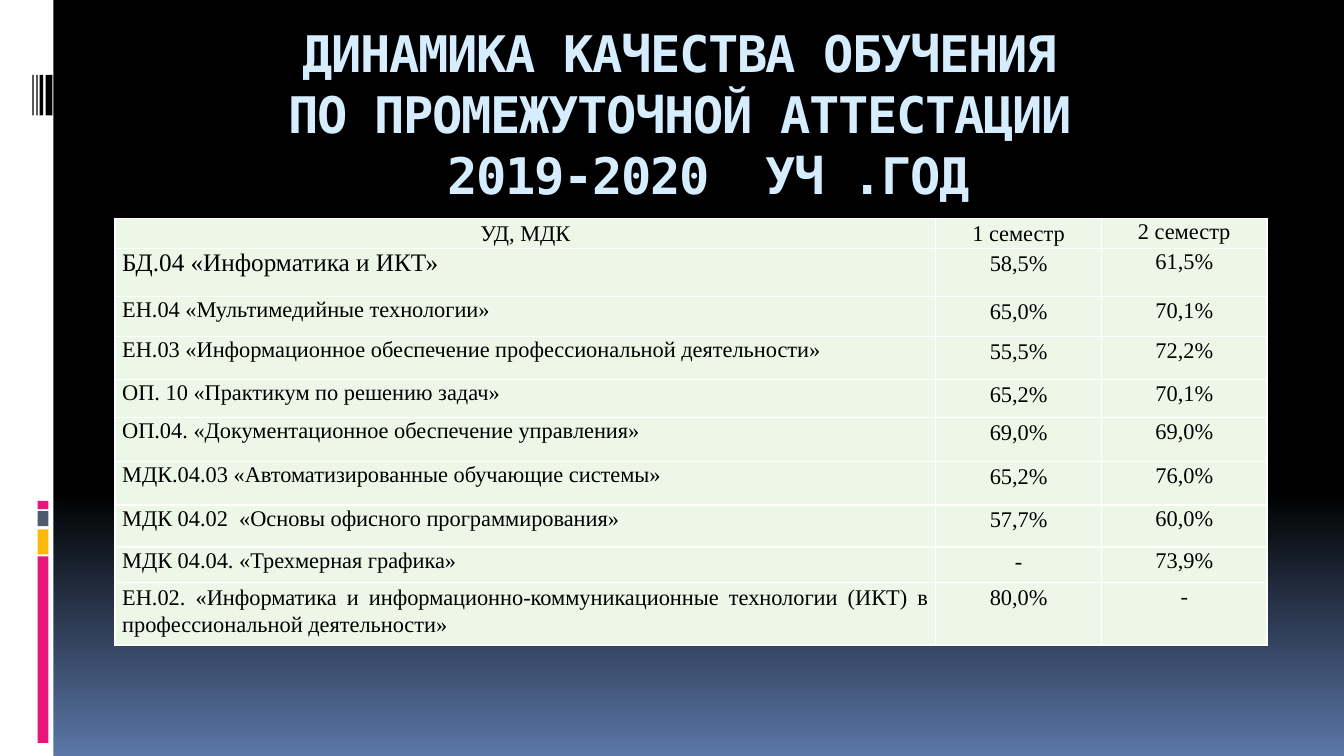
from lxml.etree import SubElement
from pptx import Presentation
from pptx.dml.color import RGBColor
from pptx.enum.shapes import MSO_SHAPE
from pptx.enum.text import MSO_ANCHOR, PP_ALIGN
from pptx.oxml.ns import qn
from pptx.util import Cm, Pt

HUES = {
    "black": "000000", "blue": "5B77A8", "white": "FFFFFF", "pink": "EA157A",
    "gold": "FEB80A", "slate": "4E5B6F", "title": "D6ECFF", "cell": "ECF7E8",
}
TITLE = (
    "ДИНАМИКА КАЧЕСТВА ОБУЧЕНИЯ \v"
    "ПО ПРОМЕЖУТОЧНОЙ АТТЕСТАЦИИ \v"
    " 2019-2020  УЧ .ГОД"
)
ROWS = [
    (0.72, "УД, МДК", "1 семестр", "2 семестр"),
    (1.22, "БД.04 «Информатика и ИКТ»", "58,5%", "61,5%"),
    (1, "ЕН.04 «Мультимедийные технологии»", "65,0%", "70,1%"),
    (1.09, "ЕН.03 «Информационное обеспечение профессиональной деятельности»",
     "55,5%", "72,2%"),
    (0.96, "ОП. 10 «Практикум по решению задач»", "65,2%", "70,1%"),
    (1.1, "ОП.04. «Документационное обеспечение управления»", "69,0%", "69,0%"),
    (1.1, "МДК.04.03 «Автоматизированные обучающие системы»", "65,2%", "76,0%"),
    (1.06, "МДК 04.02  «Основы офисного программирования»", "57,7%", "60,0%"),
    (0.9, "МДК 04.04. «Трехмерная графика»", "-", "73,9%"),
    (1.57, "ЕН.02. «Информатика и информационно-коммуникационные технологии (ИКТ) "
     "в профессиональной деятельности»", "80,0%", "-"),
]
COLS = [20.68, 4.18, 4.17]
BLOCKS = [(14.02, 4.7, "pink"), (13.34, 0.63, "gold"),
          (12.88, 0.38, "slate"), (12.62, 0.21, "pink")]
BARS = [(1.15, 0.17), (1, 0.09), (0.92, 0.03), (0.82, 0.03)]


def tint(name):
    return RGBColor.from_string(HUES[name])


def rect(slide, left, top, width, height, hue):
    box = slide.shapes.add_shape(
        MSO_SHAPE.RECTANGLE, Cm(left), Cm(top), Cm(width), Cm(height))
    box.shadow.inherit = False
    box.fill.solid()
    box.fill.fore_color.rgb = tint(hue)
    box.line.fill.background()


def style(para, face, size, hue, align):
    para.alignment = align
    para.font.name = face
    para.font.size = Pt(size)
    para.font.color.rgb = tint(hue)


def border(cell):
    props = cell._tc.get_or_add_tcPr()
    for place, side in enumerate(("lnL", "lnR", "lnT", "lnB")):
        line = SubElement(props, qn(f"a:{side}"), w=str(Pt(1)))
        props.insert(place, line)
        fill = SubElement(line, qn("a:solidFill"))
        SubElement(fill, qn("a:srgbClr"), val=HUES["white"])


def add_back(slide):
    fill = slide.background.fill
    fill.gradient()
    fill.gradient_angle = 270
    for stop, spot, hue in zip(fill.gradient_stops, (0.65, 1), ("black", "blue")):
        stop.position = spot
        stop.color.rgb = tint(hue)
    rect(slide, 0, 0, 1.35, 19.05, "white")
    for top, height, hue in BLOCKS:
        rect(slide, 0.95, top, 0.27, height, hue)
    for left, width in BARS:
        rect(slide, left, 1.89, width, 1.02, "black")


def add_title(slide):
    frame = slide.shapes.add_textbox(Cm(4.34), Cm(0.38), Cm(26.31), Cm(4.65)).text_frame
    frame.word_wrap = True
    frame.margin_top = Cm(0.17)
    frame.text = TITLE
    para = frame.paragraphs[0]
    style(para, "DejaVu Sans Mono", 36, "title", PP_ALIGN.CENTER)
    para.font.bold = True
    para.line_spacing = Pt(43.5)
    for run in para.runs:
        run.font._element.set("spc", "-100")


def add_grid(slide):
    high = sum(row[0] for row in ROWS)
    table = slide.shapes.add_table(
        len(ROWS), len(COLS), Cm(2.9), Cm(5.5), Cm(sum(COLS)), Cm(high)).table
    table.first_row = table.horz_banding = False
    for col, width in zip(table.columns, COLS):
        col.width = Cm(width)
    for r, (height, *texts) in enumerate(ROWS):
        table.rows[r].height = Cm(height)
        for c, text in enumerate(texts):
            cell = table.cell(r, c)
            cell.fill.solid()
            cell.fill.fore_color.rgb = tint("cell")
            cell.margin_left = cell.margin_right = Cm(0.18 if c < 2 else 0)
            cell.margin_top = Cm(0.03 if c < 2 else 0)
            cell.margin_bottom = 0
            cell.vertical_anchor = MSO_ANCHOR.TOP
            cell.text = text
            para = cell.text_frame.paragraphs[0]
            last = r == len(ROWS) - 1
            mid = c > 0 or r == 0
            align = (PP_ALIGN.CENTER if mid else
                     PP_ALIGN.JUSTIFY if last else PP_ALIGN.LEFT)
            size = 18 if (r, c) == (1, 0) else 16
            style(para, "Times New Roman", size, "black", align)
            if mid or last:
                para.line_spacing = 1.07
            if mid:
                para.space_after = Pt(8)
            border(cell)


def main():
    deck = Presentation()
    deck.slide_width, deck.slide_height = Cm(33.87), Cm(19.05)
    slide = deck.slides.add_slide(deck.slide_layouts[6])
    add_back(slide)
    add_title(slide)
    add_grid(slide)
    deck.save("out.pptx")


if __name__ == "__main__":
    main()
